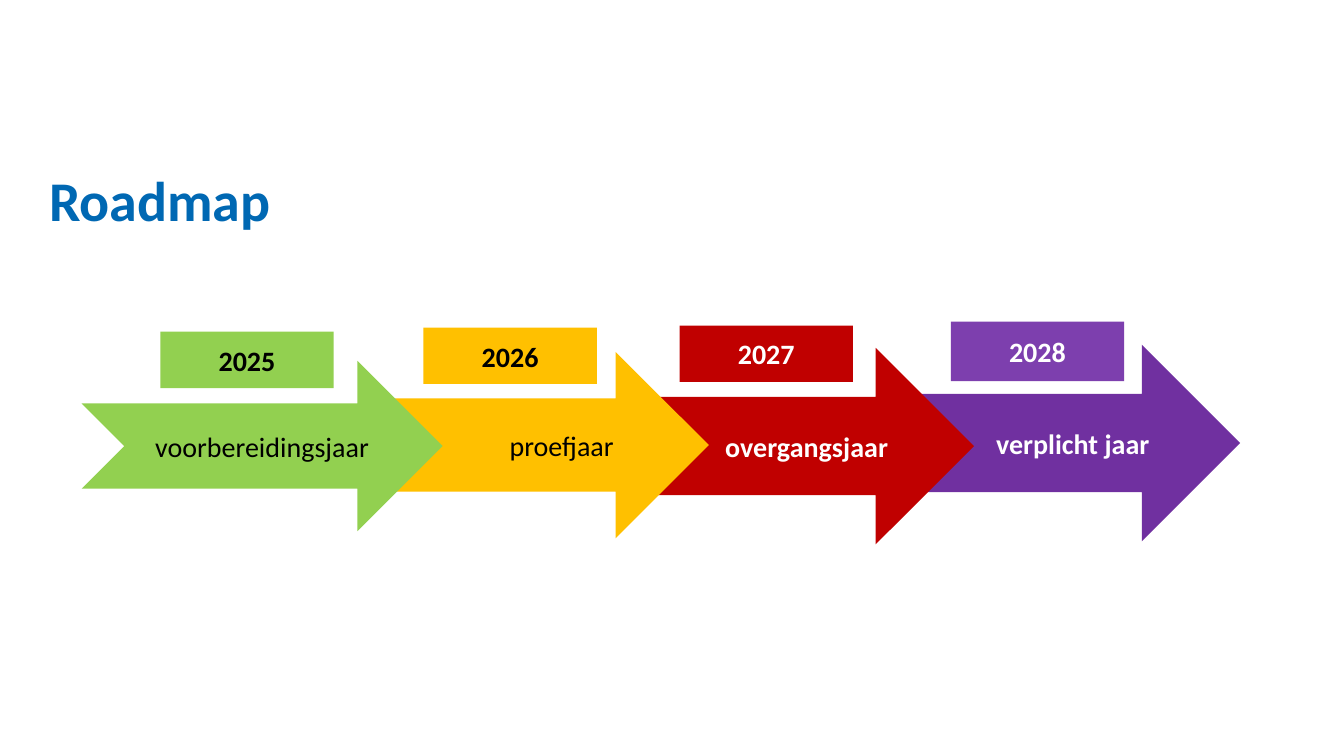
from dataclasses import dataclass

from pptx import Presentation
from pptx.dml.color import RGBColor
from pptx.enum.shapes import MSO_SHAPE
from pptx.enum.text import MSO_ANCHOR, PP_ALIGN
from pptx.shapes.autoshape import Shape
from pptx.slide import Slide
from pptx.util import Emu, Pt

SCALE = 9144


@dataclass(frozen=True)
class Theme:
    font: str = "Calibri"
    title: int = 40
    body: int = 20
    blue: str = "0068B3"
    green: str = "92D050"
    gold: str = "FFC000"
    red: str = "C00000"
    purple: str = "7030A0"
    violet: str = "7D3FAE"
    black: str = "000000"
    white: str = "FFFFFF"


@dataclass(frozen=True)
class Block:
    text: str
    left: int
    top: int
    width: int
    height: int
    fill: str
    ink: str
    bold: bool = True
    inset: int = 10


THEME = Theme()


def px(count: int) -> Emu:
    return Emu(count * SCALE)


def write(shape: Shape, text: str, size: int, ink: str, bold: bool, align: PP_ALIGN) -> None:
    frame = shape.text_frame
    frame.word_wrap = True
    frame.vertical_anchor = MSO_ANCHOR.MIDDLE
    para = frame.paragraphs[0]
    para.text = text
    para.alignment = align
    para.font.name = THEME.font
    para.font.size = Pt(size)
    para.font.bold = bold
    para.font.color.rgb = RGBColor.from_string(ink)


def draw(slide: Slide, kind: MSO_SHAPE, block: Block) -> None:
    shape = slide.shapes.add_shape(
        kind, px(block.left), px(block.top), px(block.width), px(block.height)
    )
    shape.shadow.inherit = False
    shape.fill.solid()
    shape.fill.fore_color.rgb = RGBColor.from_string(block.fill)
    shape.line.fill.background()
    shape.text_frame.margin_left = px(block.inset)
    write(shape, block.text, THEME.body, block.ink, block.bold, PP_ALIGN.CENTER)


def add_title(slide: Slide, text: str) -> None:
    box = slide.shapes.add_textbox(px(39), px(148), px(1150), px(108))
    write(box, text, THEME.title, THEME.blue, True, PP_ALIGN.LEFT)
    box.text_frame.paragraphs[0].line_spacing = 0.9


ARROWS = [
    Block("verplicht jaar", 898, 342, 332, 195, THEME.purple, THEME.white),
    Block("overgangsjaar", 634, 345, 332, 195, THEME.red, THEME.white),
    Block("proefjaar", 368, 349, 335, 185, THEME.gold, THEME.black, False, 53),
    Block("voorbereidingsjaar", 81, 358, 358, 169, THEME.green, THEME.black, False),
]

YEARS = [
    Block("2025", 159, 329, 172, 56, THEME.green, THEME.black),
    Block("2026", 420, 325, 172, 56, THEME.gold, THEME.black),
    Block("2027", 674, 323, 172, 56, THEME.red, THEME.white),
    Block("2028", 943, 319, 172, 59, THEME.violet, THEME.white),
]


def main() -> None:
    deck = Presentation()
    deck.slide_width, deck.slide_height = px(1333), px(750)
    slide = deck.slides.add_slide(deck.slide_layouts[6])
    add_title(slide, "Roadmap")
    for arrow in ARROWS:
        draw(slide, MSO_SHAPE.NOTCHED_RIGHT_ARROW, arrow)
    for year in YEARS:
        draw(slide, MSO_SHAPE.RECTANGLE, year)
    deck.save("out.pptx")


if __name__ == "__main__":
    main()
